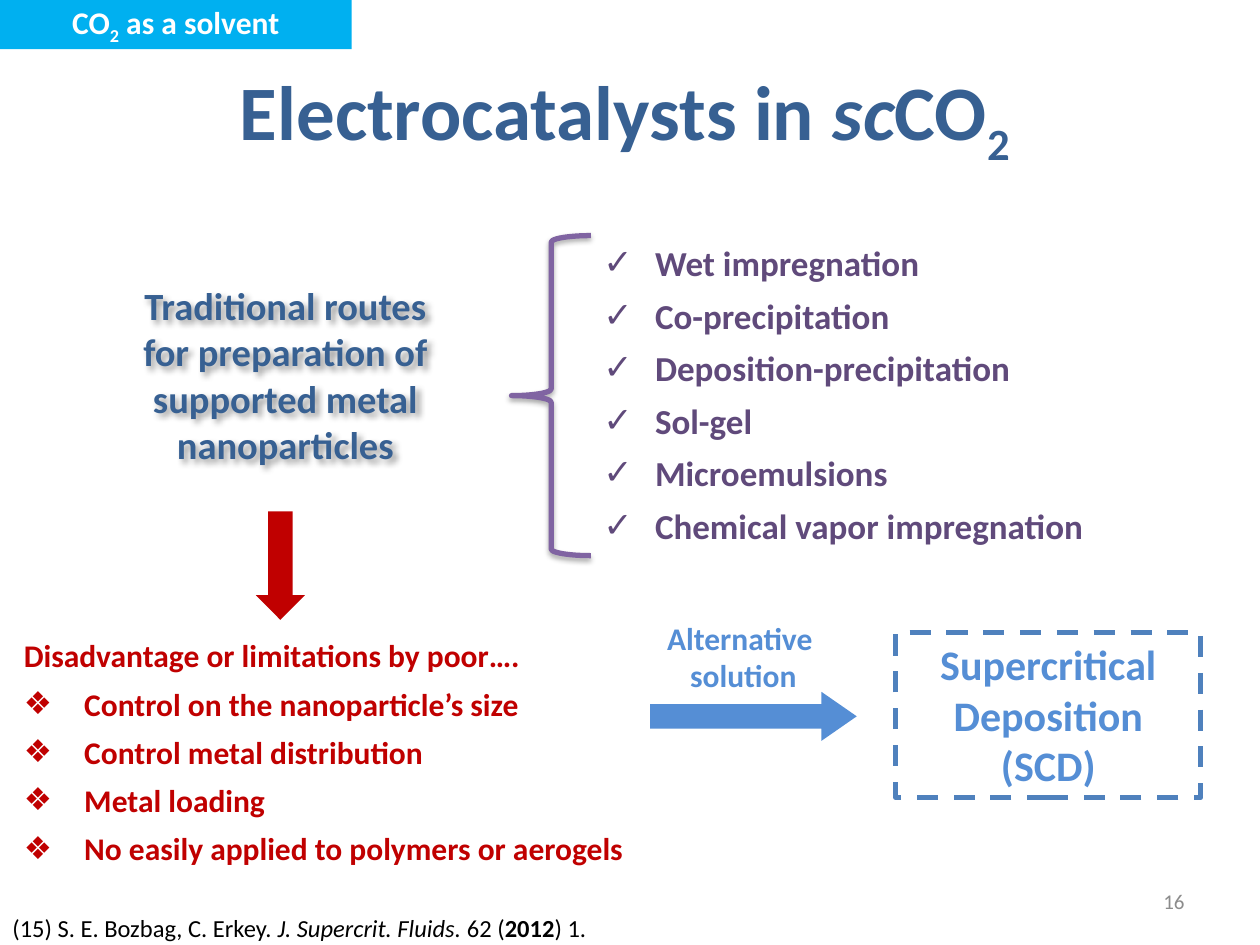
from dataclasses import dataclass
from lxml import etree
from pptx import Presentation, util as u
from pptx.dml.color import RGBColor
from pptx.enum import dml, shapes, text
from pptx.oxml import ns


@dataclass(frozen=True)
class Theme:
    font: str = "Calibri"
    navy: str = "376092"
    plum: str = "604A7B"
    brace: str = "8064A2"
    red: str = "C00000"
    sky: str = "558ED5"
    edge: str = "4F81BD"
    tag: str = "00B0F0"
    white: str = "FFFFFF"
    black: str = "000000"
    gray: str = "8C8C8C"
    title: int = 44
    big: int = 24
    lead: int = 22
    list: int = 20
    body: int = 18
    note: int = 14
    num: int = 12


T = Theme()
ALIGN = {"l": text.PP_ALIGN.LEFT, "c": text.PP_ALIGN.CENTER, "r": text.PP_ALIGN.RIGHT}

prs = Presentation()
prs.slide_width, prs.slide_height = u.Inches(10), u.Inches(7.5)
slide = prs.slides.add_slide(prs.slide_layouts[6])
COL, ROW = prs.slide_width / 100, prs.slide_height / 75  # grid of 100 columns by 75 rows


def write(lines, at=None, shape=None, size=T.body, color=T.black, bold=True,
          align="l", mid=False, after=0, bullet=None, hang=0, plain=0):
    """Each line is a string or a list of (words, marks): b bold, i italic, s subscript.
    The first `plain` lines carry no bullet; `hang` is in columns."""
    if shape is None:
        x, y, w, h = at
        shape = slide.shapes.add_textbox(int(x * COL), int(y * ROW), int(w * COL), int(h * ROW))
    frame = shape.text_frame
    frame.word_wrap = True
    frame.vertical_anchor = text.MSO_ANCHOR.MIDDLE if mid else text.MSO_ANCHOR.TOP
    for n, line in enumerate(lines):
        par = frame.paragraphs[0] if n == 0 else frame.add_paragraph()
        par.alignment, par.space_after = ALIGN[align], u.Pt(after)
        if bullet and n >= plain:
            props = par._p.get_or_add_pPr()
            props.set("marL", str(int(hang * COL)))
            props.set("indent", str(-int(hang * COL)))
            etree.SubElement(props, ns.qn("a:buFont")).set("typeface", "Wingdings")
            props[-1].set("typeface", "Arial")
            etree.SubElement(props, ns.qn("a:buChar")).set("char", bullet)
        for words, marks in [(line, "")] if isinstance(line, str) else line:
            for k, part in enumerate(words.split("\v")):
                if k:
                    par.add_line_break()
                run = par.add_run()
                run.text = part
                font = run.font
                font.name, font.size = T.font, u.Pt(size)
                font.bold, font.italic = bold or "b" in marks, "i" in marks
                font.color.rgb = RGBColor.from_string(color)
                if "s" in marks:
                    run._r.get_or_add_rPr().set("baseline", "-25000")
    return shape


def draw(kind, at, fill=None, line=None, glow=None):
    """Preset shape on the grid."""
    x, y, w, h = at
    shape = slide.shapes.add_shape(kind, int(x * COL), int(y * ROW), int(w * COL), int(h * ROW))
    shape.shadow.inherit = False
    if fill:
        shape.fill.solid()
        shape.fill.fore_color.rgb = RGBColor.from_string(fill)
    else:
        shape.fill.background()
    if line:
        shape.line.color.rgb = RGBColor.from_string(line)
        shape.line.width = u.Pt(3)
    else:
        shape.line.fill.background()
    return shape


KIND = shapes.MSO_SHAPE

# Section tag and title
tag = draw(KIND.RECTANGLE, (0, 0, 27.9, 3.9), fill=T.tag)
write([[("CO", ""), ("2", "s"), (" as a solvent", "")]], shape=tag,
      color=T.white, align="c", mid=True)
write([[("Electrocatalysts in ", ""), ("sc", "i"), ("CO", ""), ("2 ", "s")]],
      at=(0, 3, 100, 12.5), size=T.title, color=T.navy, align="c", mid=True)

# Traditional routes and their methods
routes = write(["Traditional routes\vfor preparation of supported metal nanoparticles"],
               at=(7, 21.9, 31.3, 15.8), size=T.lead, color=T.navy, align="c")
brace = draw(KIND.LEFT_BRACE, (40.6, 18.7, 6.3, 25.4), line=T.brace)
write(["Wet impregnation", "Co-precipitation", "Deposition-precipitation", "Sol-gel",
       "Microemulsions", "Chemical vapor impregnation"],
      at=(46.9, 18.7, 44.5, 25.4), size=T.list, color=T.plum, after=6, bullet="✓", hang=4.1)

# Soft shadows: blur and distance in points, angle in degrees, opacity in percent
for item, blur, dist, angle, alpha in ((routes, 4, 3, 45, 40), (brace, 3.1, 1.8, 90, 35)):
    props = item._element.spPr
    effects = props.find(ns.qn("a:effectLst"))
    if effects is None:
        effects = etree.SubElement(props, ns.qn("a:effectLst"))
    shade = etree.SubElement(effects, ns.qn("a:outerShdw"), blurRad=str(u.Pt(blur)),
                             dist=str(u.Pt(dist)), dir=str(angle * 60000), rotWithShape="0")
    tone = etree.SubElement(shade, ns.qn("a:srgbClr"), val=T.black)
    etree.SubElement(tone, ns.qn("a:alpha"), val=str(alpha * 1000))

# Limitations
draw(KIND.DOWN_ARROW, (20.3, 40.6, 3.9, 8.6), fill=T.red)
write(["Disadvantage or limitations by poor….", "Control on the nanoparticle’s size",
       "Control metal distribution", "Metal loading", "No easily applied to polymers or aerogels"],
      at=(0.9, 50, 50.8, 19.5), color=T.red, after=6, bullet="❖", hang=4.8, plain=1)

# Alternative solution
arrow = draw(KIND.RIGHT_ARROW, (51.6, 54.9, 16.4, 3.9), fill=T.sky)
arrow.adjustments[1] = 0.72
write(["Alternative ", "solution"], at=(51.6, 48.6, 14.8, 7.1), color=T.sky, align="c")
goal = draw(KIND.RECTANGLE, (71.1, 50.2, 24.2, 13.1), line=T.edge)
goal.line.dash_style = dml.MSO_LINE.DASH
write(["Supercritical Deposition (SCD)"], shape=goal, size=T.big, color=T.sky, align="c")

# Reference and page number
write([[("(15) S. E. Bozbag, C. Erkey. ", ""), ("J. Supercrit. Fluids. ", "i"), ("62 (", ""),
        ("2012", "b"), (") 1.", "")]], at=(0, 72, 68, 3.4), size=T.note, bold=False)
write(["16"], at=(71.7, 69.5, 23.3, 4), size=T.num, color=T.gray, bold=False,
      align="r", mid=True)

prs.save("out.pptx")
